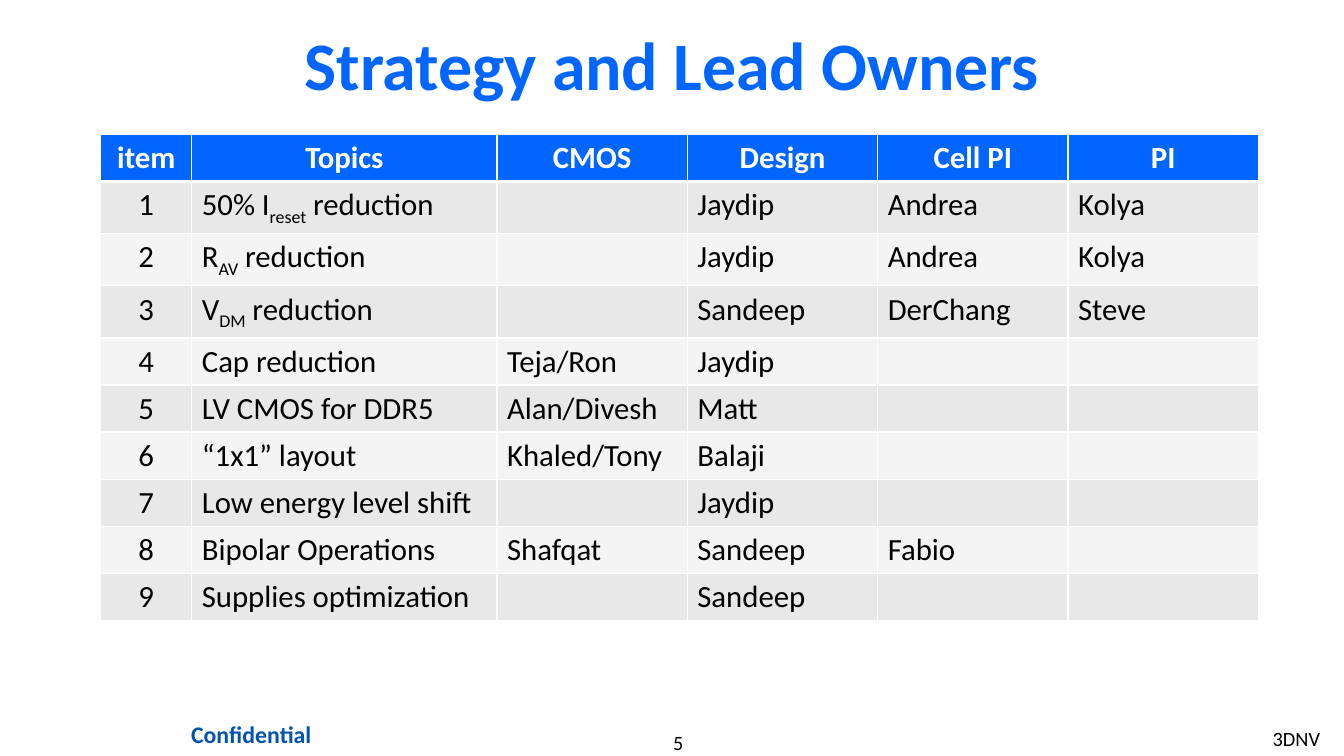
"""Build the Strategy and Lead Owners slide."""
from lxml.etree import SubElement
from pptx import Presentation
from pptx.dml.color import RGBColor
from pptx.enum.text import MSO_ANCHOR, PP_ALIGN
from pptx.oxml import parse_xml
from pptx.oxml.ns import nsdecls, qn
from pptx.util import Pt

COLORS = {
    "blue": "0066FF", "navy": "0054B0", "white": "FFFFFF",
    "black": "000000", "odd": "E8E8E8", "even": "F4F4F4",
}
FONT = "Calibri"
TITLE = "Strategy and Lead Owners"
HEADERS = ["item", "Topics", "CMOS", "Design", "Cell PI", "PI"]
TOPICS = [
    ("50% I_reset_ reduction", "", "Jaydip", "Andrea", "Kolya"),
    ("R_AV_ reduction", "", "Jaydip", "Andrea", "Kolya"),
    ("V_DM_ reduction", "", "Sandeep", "DerChang", "Steve"),
    ("Cap reduction", "Teja/Ron", "Jaydip", "", ""),
    ("LV CMOS for DDR5", "Alan/Divesh", "Matt", "", ""),
    ("“1x1” layout", "Khaled/Tony", "Balaji", "", ""),
    ("Low energy level shift", "", "Jaydip", "", ""),
    ("Bipolar Operations", "Shafqat", "Sandeep", "Fabio", ""),
    ("Supplies optimization", "", "Sandeep", "", ""),
]
COLUMN_WIDTHS = [65, 218] + [136] * 4
ROW_HEIGHT = 29.5
TABLE_LEFT, TABLE_TOP = 72, 96
LABELS = [
    ("5", (400.5, 521.5, 168, 17), (0, 0), dict(size=14.5, align=PP_ALIGN.CENTER)),
    ("3DNV", (902, 515, 50.5, 25), (7.2, 3.6), dict(size=14.5)),
    ("Confidential", (111.5, 510, 136, 29.5), (8.6, 4.3),
     dict(size=17, color="navy", bold=True, align=PP_ALIGN.CENTER)),
    (TITLE, (72, 12, 816, 66.5), (7.2, 3.6),
     dict(size=48.5, color="blue", bold=True, align=PP_ALIGN.CENTER,
          anchor=MSO_ANCHOR.MIDDLE)),
]


def write(frame, text, size=22, color="black", bold=False,
          align=PP_ALIGN.LEFT, anchor=MSO_ANCHOR.TOP):
    """Fill a text frame, lowering the parts between underscores."""
    frame.vertical_anchor = anchor
    para = frame.paragraphs[0]
    para.alignment = align
    para.font.size = Pt(size)
    for index, part in enumerate(text.split("_")):
        if not part:
            continue
        span = para.add_run()
        span.text = part
        span.font.name = FONT
        span.font.size = Pt(size)
        span.font.bold = bold
        span.font.color.rgb = RGBColor.from_string(COLORS[color])
        if index % 2:
            span.font._element.set("baseline", "-25000")


def add_label(page, text, bounds, insets, style):
    """Place a text box on the page."""
    box = page.shapes.add_textbox(*map(Pt, bounds))
    frame = box.text_frame
    frame.word_wrap = True
    frame.margin_left = frame.margin_right = Pt(insets[0])
    frame.margin_top = frame.margin_bottom = Pt(insets[1])
    write(frame, text, **style)


def add_borders(cell, row):
    """Draw white cell borders, thicker below the header."""
    widths = {"L": 1, "R": 1, "T": 3 if row == 1 else 1, "B": 3 if row == 0 else 1}
    properties = cell._tc.get_or_add_tcPr()
    for index, (side, width) in enumerate(widths.items()):
        line = parse_xml(f'<a:ln{side} {nsdecls("a")} w="{Pt(width)}"/>')
        fill = SubElement(line, qn("a:solidFill"))
        SubElement(fill, qn("a:srgbClr"), val=COLORS["white"])
        properties.insert(index, line)


def add_owner_table(page):
    """Build the table of topics and owners."""
    rows = [HEADERS] + [(str(number), *topic) for number, topic in enumerate(TOPICS, 1)]
    table = page.shapes.add_table(
        len(rows), len(HEADERS), Pt(TABLE_LEFT), Pt(TABLE_TOP),
        Pt(sum(COLUMN_WIDTHS)), Pt(ROW_HEIGHT * len(rows))).table
    for column, width in zip(table.columns, COLUMN_WIDTHS):
        column.width = Pt(width)
    for row, values in enumerate(rows):
        table.rows[row].height = Pt(ROW_HEIGHT)
        header = row == 0
        shade = "blue" if header else "odd" if row % 2 else "even"
        for column, text in enumerate(values):
            cell = table.cell(row, column)
            cell.fill.solid()
            cell.fill.fore_color.rgb = RGBColor.from_string(COLORS[shade])
            add_borders(cell, row)
            centred = header or column == 0
            write(cell.text_frame, text, bold=header,
                  color="white" if header else "black",
                  align=PP_ALIGN.CENTER if centred else PP_ALIGN.LEFT)


def main():
    """Assemble and save the deck."""
    deck = Presentation()
    deck.slide_width, deck.slide_height = Pt(960), Pt(540)
    page = deck.slides.add_slide(deck.slide_layouts[6])
    for label in LABELS:
        add_label(page, *label)
    add_owner_table(page)
    deck.save("out.pptx")


if __name__ == "__main__":
    main()
